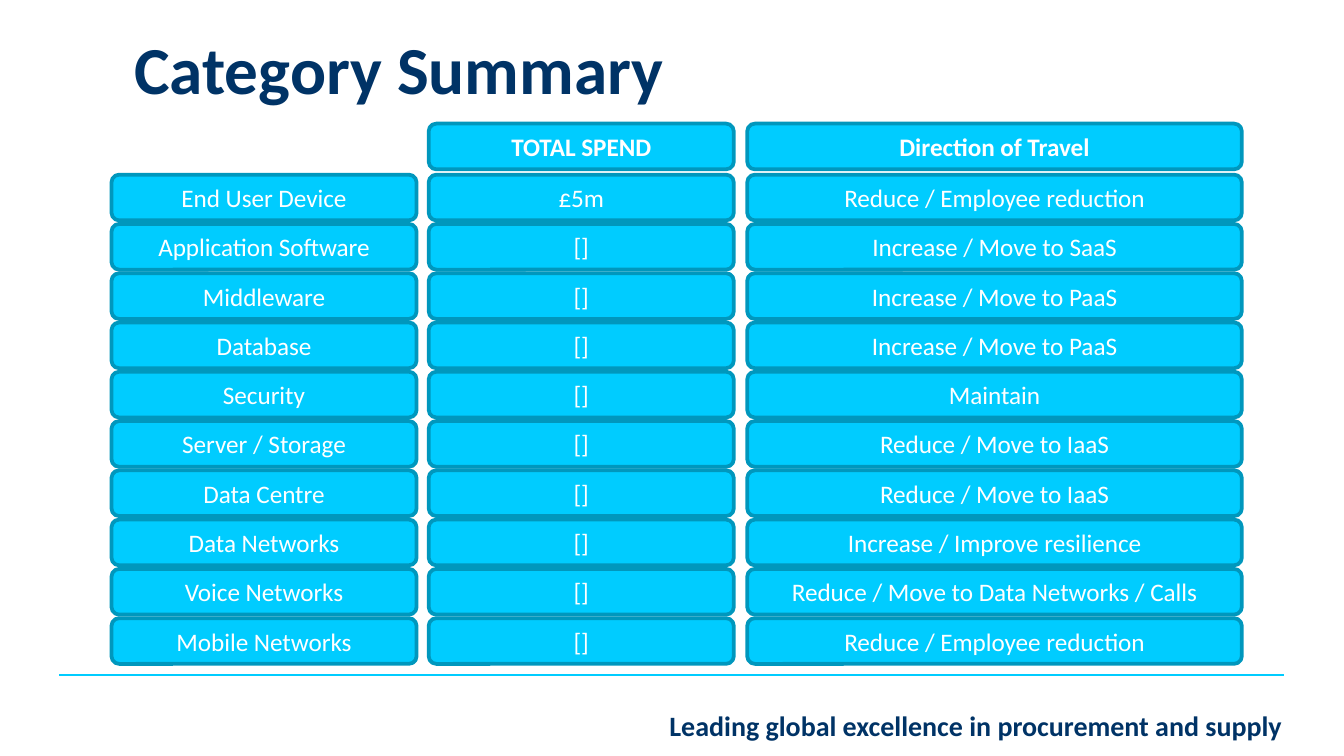
from dataclasses import dataclass

from lxml.etree import SubElement
from pptx import Presentation
from pptx.dml.color import RGBColor as RGB
from pptx.enum.shapes import MSO_CONNECTOR as CONNECTOR, MSO_SHAPE as SHAPE
from pptx.enum.text import MSO_ANCHOR as ANCHOR, PP_ALIGN as ALIGN
from pptx.oxml.ns import qn
from pptx.util import Inches, Pt


@dataclass(frozen=True)
class Theme:
    font: str = "Calibri"
    navy: RGB = RGB(0x00, 0x33, 0x66)
    cyan: RGB = RGB(0x00, 0xCC, 0xFF)
    teal: RGB = RGB(0x00, 0x97, 0xBD)
    white: RGB = RGB(0xFF, 0xFF, 0xFF)
    title_size: float = 36
    cell_size: float = 13.5
    strapline_size: float = 15


THEME = Theme()

# Grid in inches: (left, width) of each column, then the rows
COLUMNS = [(0.83, 2.27), (3.19, 2.27), (5.56, 3.68)]
HEADER_TOP, FIRST_TOP, LAST_TOP, ROW_HEIGHT = 0.92, 1.3, 4.6, 0.34

HEADINGS = [None, "TOTAL SPEND", "Direction of Travel"]
CATEGORIES = [
    ("End User Device", "£5m", "Reduce / Employee reduction"),
    ("Application Software", "[]", "Increase / Move to SaaS"),
    ("Middleware", "[]", "Increase / Move to PaaS"),
    ("Database", "[]", "Increase / Move to PaaS"),
    ("Security", "[]", "Maintain"),
    ("Server / Storage", "[]", "Reduce / Move to IaaS"),
    ("Data Centre", "[]", "Reduce / Move to IaaS"),
    ("Data Networks", "[]", "Increase / Improve resilience"),
    ("Voice Networks", "[]", "Reduce / Move to Data Networks / Calls"),
    ("Mobile Networks", "[]", "Reduce / Employee reduction"),
]


def write(frame, text, size, color, bold=False, align=ALIGN.LEFT):
    frame.word_wrap = True
    frame.text = text
    paragraph = frame.paragraphs[0]
    paragraph.alignment = align
    font = paragraph.runs[0].font
    font.name, font.size, font.bold = THEME.font, Pt(size), bold
    font.color.rgb = color
    return paragraph


def add_title(slide, text):
    title = slide.shapes.add_textbox(Inches(1), Inches(0.3), Inches(8.31), Inches(1.09))
    frame = title.text_frame
    frame.margin_left = frame.margin_top = frame.margin_right = frame.margin_bottom = 0
    paragraph = write(frame, text, THEME.title_size, THEME.navy, bold=True)
    paragraph.line_spacing = Pt(THEME.title_size)


def add_strapline(slide, text):
    strapline = slide.shapes.add_shape(
        SHAPE.RECTANGLE, Inches(3.52), Inches(5.22), Inches(6.12), Inches(0.35))
    strapline.shadow.inherit = False
    strapline.fill.solid()
    strapline.fill.fore_color.rgb = THEME.white
    strapline.line.fill.background()
    strapline.text_frame.vertical_anchor = ANCHOR.TOP
    write(strapline.text_frame, text, THEME.strapline_size, THEME.navy,
          bold=True, align=ALIGN.RIGHT)


def add_rule(slide, left, right, top):
    rule = slide.shapes.add_connector(
        CONNECTOR.STRAIGHT, Inches(left), Inches(top), Inches(right), Inches(top))
    rule.line.color.rgb = THEME.cyan
    rule.line.width = Pt(1)
    SubElement(rule.element.spPr, qn("a:effectLst"))


def add_row(slide, top, labels, bold=False):
    for (left, width), label in zip(COLUMNS, labels):
        if label is None:
            continue
        cell = slide.shapes.add_shape(
            SHAPE.ROUNDED_RECTANGLE, Inches(left), Inches(top), Inches(width), Inches(ROW_HEIGHT))
        cell.shadow.inherit = False
        cell.fill.solid()
        cell.fill.fore_color.rgb = THEME.cyan
        cell.line.color.rgb = THEME.teal
        cell.line.width = Pt(2)
        cell.text_frame.vertical_anchor = ANCHOR.MIDDLE
        write(cell.text_frame, label, THEME.cell_size, THEME.white, bold, ALIGN.CENTER)


def main():
    # Widescreen, 16 to 9
    deck = Presentation()
    deck.slide_width = Inches(10)
    deck.slide_height = deck.slide_width * 9 // 16
    slide = deck.slides.add_slide(deck.slide_layouts[6])

    # Footer and title
    add_strapline(slide, "Leading global excellence in procurement and supply")
    add_rule(slide, 0.44, 9.55, 5.02)
    add_title(slide, "Category Summary")

    # Headings, then one evenly spaced row per category
    add_row(slide, HEADER_TOP, HEADINGS, bold=True)
    pitch = (LAST_TOP - FIRST_TOP) / (len(CATEGORIES) - 1)
    for index, category in enumerate(CATEGORIES):
        add_row(slide, FIRST_TOP + index * pitch, category)

    deck.save("out.pptx")


if __name__ == "__main__":
    main()
